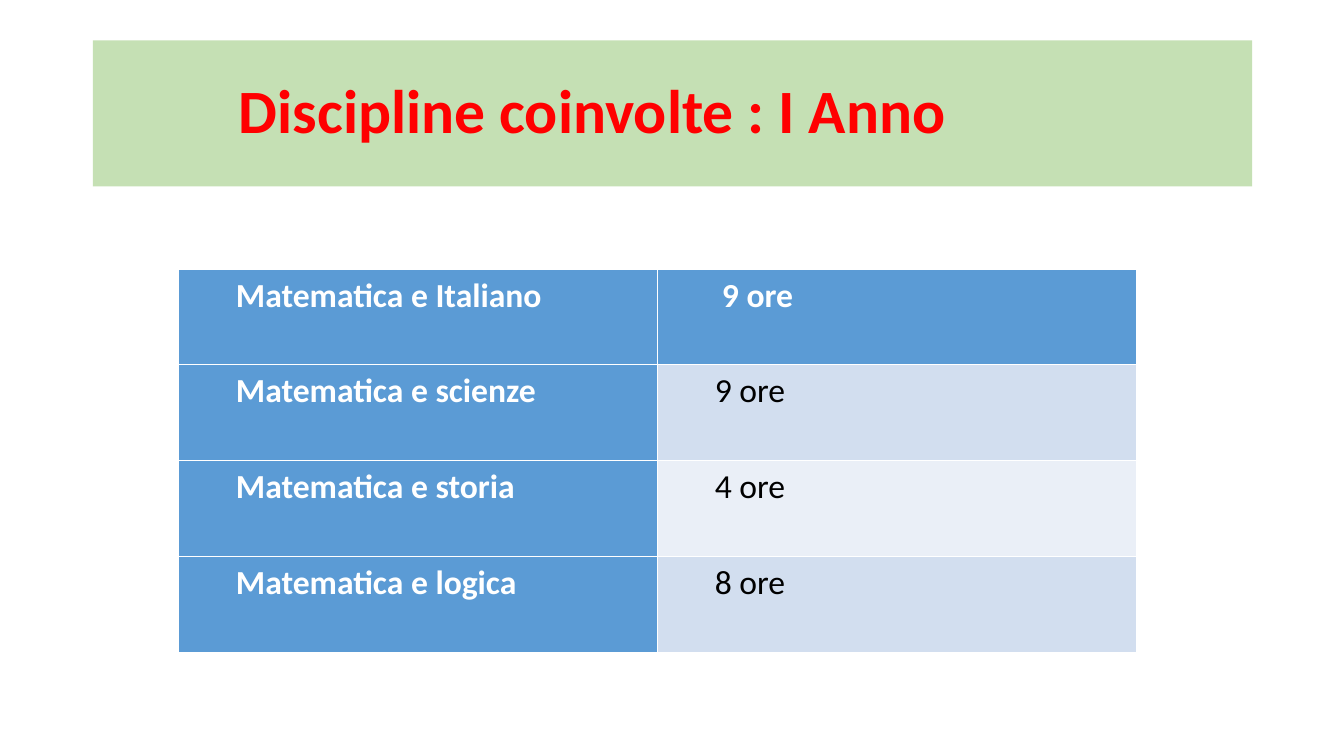
from pptx import Presentation
from pptx.dml.color import RGBColor
from pptx.enum.text import MSO_ANCHOR, PP_ALIGN
from pptx.util import Inches, Pt

WHITE = RGBColor(0xFF, 0xFF, 0xFF)
BLACK = RGBColor(0, 0, 0)
RED = RGBColor(0xFF, 0, 0)
GREEN = RGBColor(0xC5, 0xE0, 0xB4)
BLUE = RGBColor(0x5B, 0x9B, 0xD5)
BANDS = [RGBColor(0xEA, 0xEF, 0xF7), RGBColor(0xD2, 0xDE, 0xEF)]

HOURS = [
    ("Matematica e Italiano", "9 ore"),
    ("Matematica e scienze", "9 ore"),
    ("Matematica e storia", "4 ore"),
    ("Matematica e logica", "8 ore"),
]


def style(para, size, color, bold, space):
    para.alignment = PP_ALIGN.LEFT
    para.line_spacing = space
    font = para.font
    font.name = "Calibri"
    font.size = Pt(size)
    font.bold = bold
    font.color.rgb = color


def add_title(slide, left, top, width, height):
    title = slide.shapes.title
    title.left, title.top = Inches(left), Inches(top)
    title.width, title.height = Inches(width), Inches(height)
    title.fill.solid()
    title.fill.fore_color.rgb = GREEN
    frame = title.text_frame
    frame.text = "Discipline coinvolte : I Anno"
    frame.vertical_anchor = MSO_ANCHOR.MIDDLE
    frame.margin_left = Inches(1.45)
    style(frame.paragraphs[0], 44, RED, True, 0.9)


def fill_cell(cell, text, row, col):
    head = row == 0 or col == 0
    cell.text = text
    cell.fill.solid()
    cell.fill.fore_color.rgb = BLUE if head else BANDS[row % 2]
    cell.margin_left = cell.margin_right = Inches(0.07)
    cell.margin_top = cell.margin_bottom = 0
    para = cell.text_frame.paragraphs[0]
    indent = 0.57 if row == 0 and col == 1 else 0.5
    para._p.get_or_add_pPr().set("marL", str(Inches(indent)))
    style(para, 24, WHITE if head else BLACK, head, 1.15)


def add_hours(slide, left, top, width, height):
    frame = slide.shapes.add_table(
        len(HOURS), 2, Inches(left), Inches(top), Inches(width), Inches(height)
    )
    table = frame.table
    table.first_col = True
    for row, pair in enumerate(HOURS):
        for col, text in enumerate(pair):
            fill_cell(table.cell(row, col), text, row, col)


def main():
    deck = Presentation()
    deck.slide_width, deck.slide_height = Inches(13.33), Inches(7.5)
    slide = deck.slides.add_slide(deck.slide_layouts[5])
    add_title(slide, 0.92, 0.4, 11.5, 1.45)
    add_hours(slide, 1.77, 2.67, 9.5, 3.8)
    deck.save("out.pptx")


if __name__ == "__main__":
    main()
